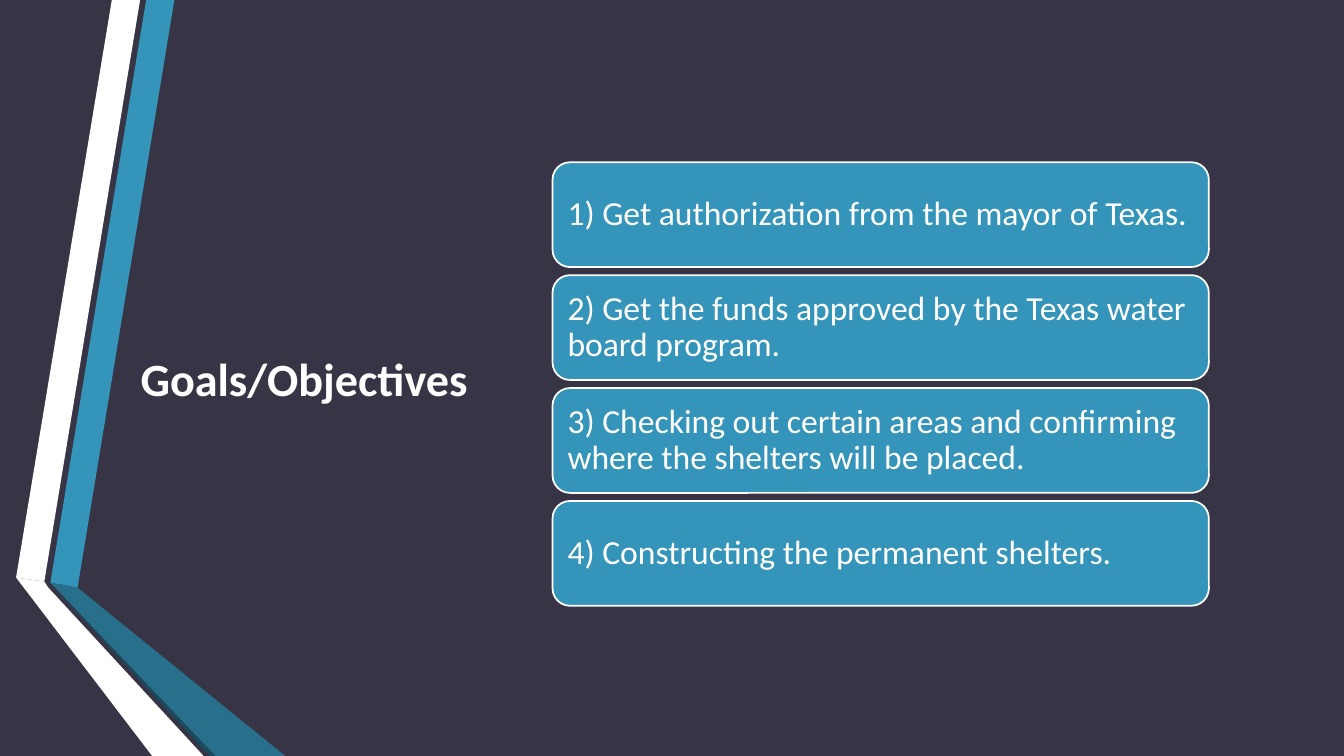
from dataclasses import dataclass

from pptx import Presentation
from pptx.dml.color import RGBColor
from pptx.enum.shapes import MSO_SHAPE as Preset
from pptx.enum.text import MSO_ANCHOR as Anchor, PP_ALIGN as Align
from pptx.util import Inches, Pt


@dataclass(frozen=True)
class Theme:
    """Colours, font and type sizes of the slide."""
    background: str = "373545"
    accent: str = "3494BA"
    accent_dark: str = "276F8B"
    accent_deep: str = "1A4A5D"
    white: str = "FFFFFF"
    font: str = "Calibri"
    title_size: float = 33
    goal_size: float = 24
    outline: float = 1.25


THEME = Theme()

RIBBONS = [
    (THEME.accent, [(0.5, 5.78), (0.77, 5.83), (1.73, 0), (1.45, 0)]),
    (THEME.white, [(1.39, 0), (1.11, 0), (0.16, 5.73), (0.44, 5.77)]),
    (THEME.accent_deep, [(0.5, 5.79), (2.08, 7.5), (2.14, 7.5)]),
    (THEME.accent_dark, [(0.5, 5.78), (2.14, 7.5), (2.83, 7.5), (0.77, 5.83)]),
    (THEME.white, [(0.16, 5.73), (1.51, 7.5), (2.02, 7.5), (0.48, 5.83), (0.44, 5.77)]),
]

GOALS = [
    "1) Get authorization from the mayor of Texas.\u00a0".rstrip(),
    "2) Get the funds approved by the Texas water board program.",
    "3) Checking out certain areas and confirming where the shelters will be placed.",
    "4) Constructing the permanent shelters.",
]


def paint(fill, colour):
    """Give a fill one solid colour."""
    fill.solid()
    fill.fore_color.rgb = RGBColor.from_string(colour)


def write(shape, text, size, bold=False, **paragraph_format):
    """Write one white, vertically centred paragraph into a shape."""
    frame = shape.text_frame
    frame_format = {"word_wrap": True, "vertical_anchor": Anchor.MIDDLE}
    for side in ("left", "top", "right", "bottom"):
        frame_format[f"margin_{side}"] = Inches(0.1)
    for name, value in frame_format.items():
        setattr(frame, name, value)
    paragraph = frame.paragraphs[0]
    for name, value in paragraph_format.items():
        setattr(paragraph, name, value)
    run = paragraph.add_run()
    run.text = text
    font_format = {"name": THEME.font, "size": Pt(size), "bold": bold}
    for name, value in font_format.items():
        setattr(run.font, name, value)
    run.font.color.rgb = RGBColor.from_string(THEME.white)


def add_ribbons(slide, left, top):
    """Draw the folded ribbons from the given corner."""
    for colour, outline in RIBBONS:
        points = [(Inches(left + x), Inches(top + y)) for x, y in outline]
        builder = slide.shapes.build_freeform(*points[0])
        builder.add_line_segments(points[1:], close=True)
        ribbon = builder.convert_to_shape()
        ribbon.shadow.inherit = False
        paint(ribbon.fill, colour)
        ribbon.line.fill.background()


def add_title(slide, left, top, width, height):
    """Place the heading at the right edge of its box."""
    box = slide.shapes.add_textbox(*map(Inches, (left, top, width, height)))
    write(box, "Goals/Objectives", THEME.title_size, bold=True, alignment=Align.RIGHT)


def add_goals(slide, left, top, width, height, gap=0.08):
    """Stack the goal cards evenly in the given box."""
    card_height = (height - gap * (len(GOALS) - 1)) / len(GOALS)
    for index, goal in enumerate(GOALS):
        card_top = top + index * (card_height + gap)
        card = slide.shapes.add_shape(
            Preset.ROUNDED_RECTANGLE, *map(Inches, (left, card_top, width, card_height)))
        card.shadow.inherit = False
        paint(card.fill, THEME.accent)
        paint(card.line.fill, THEME.white)
        card.line.width = Pt(THEME.outline)
        write(card, goal, THEME.goal_size, alignment=Align.LEFT, line_spacing=0.9)


def main():
    """Build and save the presentation."""
    presentation = Presentation()
    presentation.slide_width = Inches(13.33)
    presentation.slide_height = Inches(7.5)
    slide = presentation.slides.add_slide(presentation.slide_layouts[6])
    paint(slide.background.fill, THEME.background)
    add_ribbons(slide, 0, 0)
    add_title(slide, 1.13, 1.38, 3.61, 4.74)
    add_goals(slide, 5.48, 1.61, 6.51, 4.4)
    presentation.save("out.pptx")


if __name__ == "__main__":
    main()
